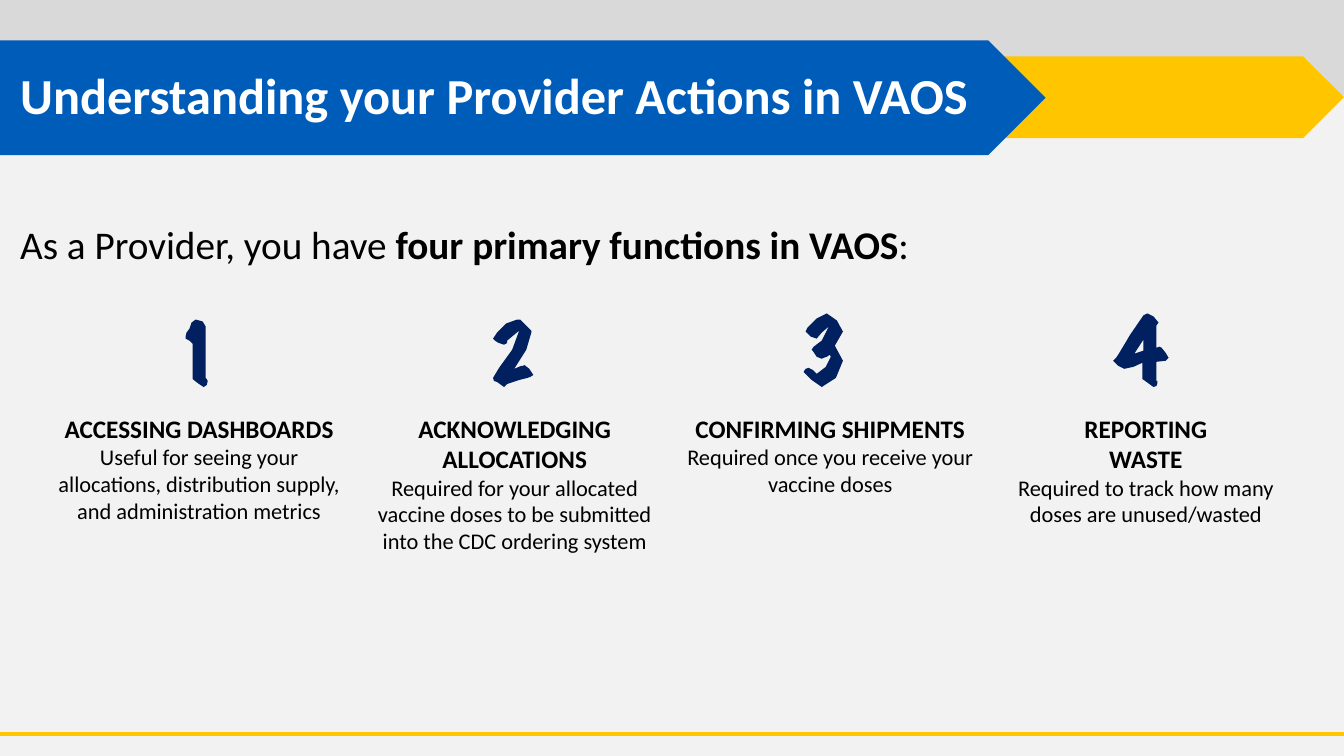
import pptx
import pptx.util
import pptx.dml.color
import pptx.enum.shapes
import pptx.enum.text
import pptx.oxml
import pptx.oxml.ns

PX = 9144  # EMU in one px, a hundredth of an inch
FONT = "Calibri"
WHITE, BLACK, BACKGROUND, GREY = "FFFFFF", "000000", "F2F2F2", "D9D9D9"
BLUE, YELLOW, NAVY = "005CB9", "FFC600", "002060"
SLIDE_WIDTH, SLIDE_HEIGHT = 1333, 750
COLUMN_LEFT, COLUMN_TOP, COLUMN_WIDTH, COLUMN_STEP = 42, 405, 311, 313

COLUMNS = [
    (["ACCESSING DASHBOARDS"],
     "Useful for seeing your allocations, distribution supply, and administration metrics"),
    (["ACKNOWLEDGING ALLOCATIONS"],
     "Required for your allocated vaccine doses to be submitted into the CDC ordering system"),
    (["CONFIRMING SHIPMENTS"], "Required once you receive your vaccine doses"),
    (["REPORTING", "WASTE"], "Required to track how many doses are unused/wasted"),
]

# Each brush-drawn numeral is a list of closed outlines, in px on the slide.
NUMERALS = [
    [[(206, 378), (205, 382), (202, 384), (196, 380), (191, 376), (191, 373),
      (191, 341), (188, 338), (184, 336), (184, 334), (185, 330), (188, 326),
      (190, 320), (194, 317), (201, 319), (204, 324), (204, 375), (205, 376)]],
    [[(529, 372), (526, 374), (523, 375), (515, 377), (503, 381), (501, 383),
      (500, 384), (493, 379), (490, 378), (489, 375), (495, 365), (508, 347),
      (515, 328), (503, 338), (503, 340), (502, 341), (500, 342), (494, 340),
      (491, 338), (489, 336), (493, 330), (502, 321), (513, 317), (516, 317),
      (519, 320), (527, 328), (527, 330), (522, 347), (510, 366), (517, 363),
      (519, 363), (520, 362), (525, 366)]],
    [[(836, 329), (828, 343), (836, 358), (829, 375), (815, 384), (805, 377),
      (797, 369), (799, 366), (802, 365), (806, 367), (810, 371), (819, 364),
      (824, 354), (823, 352), (820, 354), (817, 355), (815, 356), (810, 354),
      (806, 348), (805, 347), (807, 344), (815, 338), (822, 324), (815, 330),
      (810, 336), (804, 334), (799, 329), (801, 325), (810, 316), (820, 311),
      (830, 318)]],
    [[(1159, 355), (1156, 358), (1147, 359), (1147, 378), (1148, 378), (1148, 380),
      (1147, 383), (1144, 384), (1133, 376), (1133, 373), (1133, 371), (1133, 360),
      (1124, 364), (1115, 366), (1109, 363), (1105, 359), (1104, 358), (1107, 355),
      (1109, 352), (1121, 332), (1134, 313), (1138, 311), (1144, 314), (1149, 320),
      (1147, 323), (1147, 345), (1150, 344), (1152, 345), (1156, 350)],
     [(1134, 348), (1134, 337), (1125, 351)]],
]


def color(hex_string):
    return pptx.dml.color.RGBColor.from_string(hex_string)


def box(left, top, width, height):
    return [value * PX for value in (left, top, width, height)]


def paint(shape, fill):
    shape.shadow.inherit = False
    shape.fill.solid()
    shape.fill.fore_color.rgb = color(fill)
    shape.line.fill.background()


def style(paragraph, size, fill, bold=None):
    paragraph.font.name = FONT
    paragraph.font.size = pptx.util.Pt(size)
    paragraph.font.color.rgb = color(fill)
    paragraph.font.bold = bold


def add_band(slide, preset, bounds, fill):
    paint(slide.shapes.add_shape(preset, *box(*bounds)), fill)


def add_footer_line(slide):
    line = slide.shapes.add_connector(
        pptx.enum.shapes.MSO_CONNECTOR.STRAIGHT, *box(0, 728, SLIDE_WIDTH, 728))
    line.line.color.rgb = color(YELLOW)
    line.line.width = pptx.util.Pt(3)
    properties = line.element.find(pptx.oxml.ns.qn("p:spPr"))
    pptx.oxml.ns.qn("a:effectLst")
    properties.append(pptx.oxml.parse_xml(
        '<a:effectLst xmlns:a="http://schemas.openxmlformats.org/drawingml/2006/main"/>'))


def place(placeholder, bounds):
    """Move a placeholder and bring it in front of the bands."""
    placeholder.left, placeholder.top, placeholder.width, placeholder.height = box(*bounds)
    placeholder.text_frame.auto_size = pptx.enum.text.MSO_AUTO_SIZE.NONE
    placeholder.element.getparent().append(placeholder.element)
    return placeholder.text_frame


def fill_title(slide):
    frame = place(slide.shapes.title, (10, 25, 1150, 145))
    frame.vertical_anchor = pptx.enum.text.MSO_ANCHOR.MIDDLE
    paragraph = frame.paragraphs[0]
    paragraph.text = "Understanding your Provider Actions in VAOS"
    paragraph.alignment = pptx.enum.text.PP_ALIGN.LEFT
    paragraph.line_spacing = 0.9
    style(paragraph, 36, WHITE, True)


def fill_body(slide):
    frame = place(slide.placeholders[1], (10, 214, 1232, 436))
    paragraph = frame.paragraphs[0]
    paragraph.space_before = pptx.util.Pt(0)
    properties = paragraph._p.get_or_add_pPr()
    properties.set("marL", "0")
    properties.set("indent", "0")
    properties.append(properties.makeelement(pptx.oxml.ns.qn("a:buNone"), {}))
    style(paragraph, 28, BLACK)
    for text, bold in [("As a Provider, you have ", False),
                       ("four primary functions in VAOS", True), (":", False)]:
        run = paragraph.add_run()
        run.text = text
        run.font.bold = bold


def add_column(slide, left, headings, description):
    frame = slide.shapes.add_textbox(*box(left, COLUMN_TOP, COLUMN_WIDTH, 178)).text_frame
    frame.word_wrap = True
    frame.text = "\n".join(headings + [description])
    for paragraph in frame.paragraphs:
        paragraph.alignment = pptx.enum.text.PP_ALIGN.CENTER
        style(paragraph, 18, BLACK, True)
    style(frame.paragraphs[-1], 16, BLACK, False)


def add_numeral(slide, outlines):
    builder = slide.shapes.build_freeform(*outlines[0][0], scale=PX)
    for index, outline in enumerate(outlines):
        if index:
            builder.move_to(*outline[0])
        builder.add_line_segments(outline[1:], close=True)
    paint(builder.convert_to_shape(), NAVY)


def main():
    presentation = pptx.Presentation()
    presentation.slide_width = SLIDE_WIDTH * PX
    presentation.slide_height = SLIDE_HEIGHT * PX
    slide = presentation.slides.add_slide(presentation.slide_layouts[1])
    slide.background.fill.solid()
    slide.background.fill.fore_color.rgb = color(BACKGROUND)

    presets = pptx.enum.shapes.MSO_SHAPE
    add_band(slide, presets.RECTANGLE, (0, 0, SLIDE_WIDTH, 95), GREY)
    add_band(slide, presets.PENTAGON, (709, 56, 624, 81), YELLOW)
    add_band(slide, presets.PENTAGON, (0, 40, 1037, 114), BLUE)
    add_footer_line(slide)
    fill_title(slide)
    fill_body(slide)
    for index, (headings, description) in enumerate(COLUMNS):
        add_column(slide, COLUMN_LEFT + index * COLUMN_STEP, headings, description)
    for outlines in NUMERALS:
        add_numeral(slide, outlines)
    presentation.save("out.pptx")


if __name__ == "__main__":
    main()
